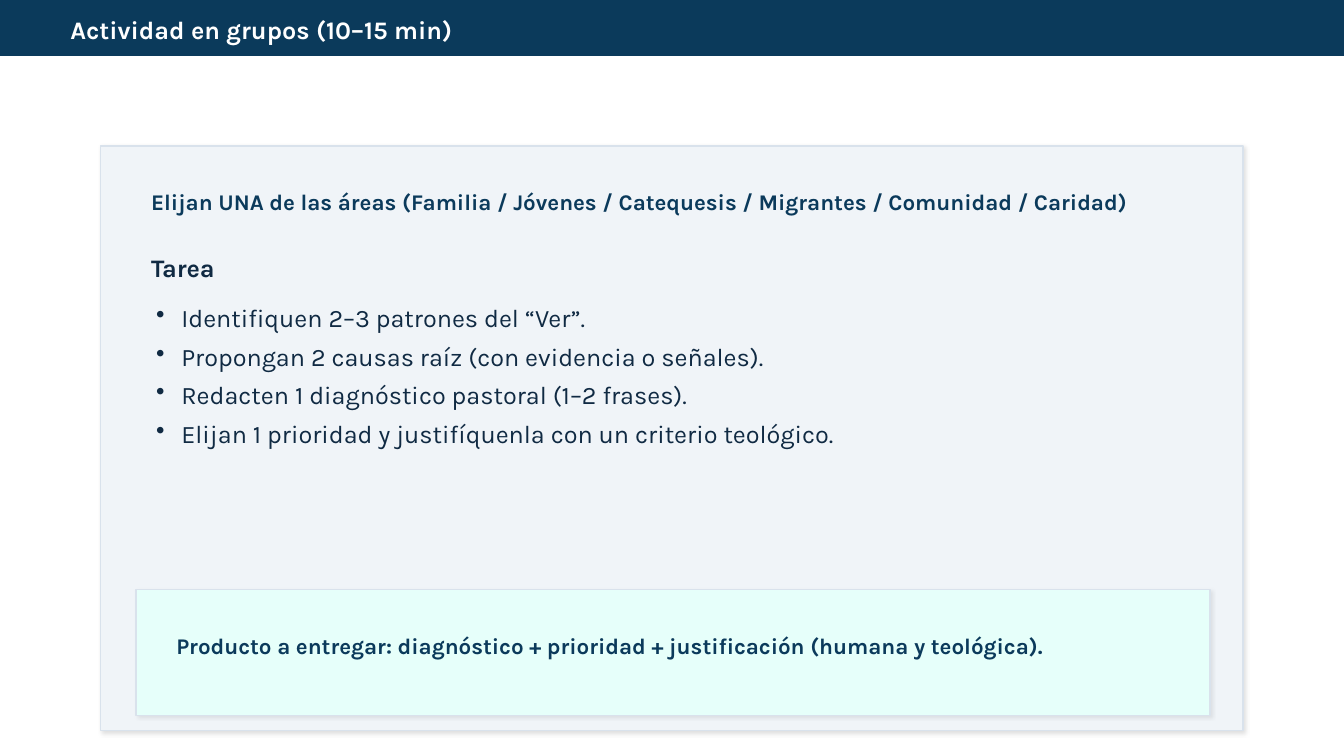
"""Builds the group activity slide with its task list and deliverable."""
from dataclasses import dataclass
from typing import Optional

from lxml.etree import SubElement
from pptx import Presentation
from pptx.dml.color import RGBColor
from pptx.enum.shapes import MSO_SHAPE
from pptx.enum.text import MSO_ANCHOR
from pptx.oxml.ns import qn
from pptx.slide import Slide
from pptx.util import Inches, Pt

COLORS = {
    "navy": "0B3A5B",
    "ink": "102A43",
    "white": "FFFFFF",
    "panel": "F0F4F8",
    "mint": "E6FFFA",
    "border": "D9E2EC",
    "shadow": "000000",
}
FONT = "Karla"


@dataclass(frozen=True)
class Shadow:
    opacity: int
    blur: float
    distance: float
    angle: int = 45


@dataclass(frozen=True)
class Panel:
    left: float
    top: float
    width: float
    height: float
    fill: str
    line: str
    shadow: Optional[Shadow] = None


@dataclass(frozen=True)
class Label:
    text: str
    left: float
    top: float
    width: float
    height: float
    size: int
    color: str


PANELS = [
    Panel(0, 0, 13.33, 0.55, "navy", "navy"),
    Panel(1, 1.45, 11.33, 5.8, "panel", "border", Shadow(12, 3, 1.5)),
    Panel(1.35, 5.85, 10.65, 1.25, "mint", "border", Shadow(8, 2.5, 1.2)),
]
LABELS = [
    Label("Actividad en grupos (10–15 min)", 0.6, 0.12, 12.2, 0.35, 18, "white"),
    Label("Elijan UNA de las áreas (Familia / Jóvenes / Catequesis / Migrantes / Comunidad / Caridad)",
          1.4, 1.75, 10.7, 0.5, 16, "navy"),
    Label("Tarea", 1.4, 2.45, 10.7, 0.4, 18, "ink"),
    Label("Producto a entregar: diagnóstico + prioridad + justificación (humana y teológica).",
          1.65, 6.15, 10.05, 0.5, 16, "navy"),
]
TASKS = [
    "Identifiquen 2–3 patrones del “Ver”.",
    "Propongan 2 causas raíz (con evidencia o señales).",
    "Redacten 1 diagnóstico pastoral (1–2 frases).",
    "Elijan 1 prioridad y justifíquenla con un criterio teológico.",
]


def color(name: str) -> RGBColor:
    return RGBColor.from_string(COLORS[name])


def add_panel(slide: Slide, panel: Panel) -> None:
    shape = slide.shapes.add_shape(
        MSO_SHAPE.RECTANGLE, Inches(panel.left), Inches(panel.top),
        Inches(panel.width), Inches(panel.height))
    shape.fill.solid()
    shape.fill.fore_color.rgb = color(panel.fill)
    shape.line.color.rgb = color(panel.line)
    shape.line.width = Pt(1)
    shape.shadow.inherit = False
    if panel.shadow:
        effects = shape._element.spPr.find(qn("a:effectLst"))
        outer = SubElement(effects, qn("a:outerShdw"), {
            "blurRad": str(Pt(panel.shadow.blur)),
            "dist": str(Pt(panel.shadow.distance)),
            "dir": str(panel.shadow.angle * 60000),
            "algn": "bl",
            "rotWithShape": "0",
        })
        tint = SubElement(outer, qn("a:srgbClr"), val=COLORS["shadow"])
        SubElement(tint, qn("a:alpha"), val=str(panel.shadow.opacity * 1000))


def add_text(slide: Slide, text: str, *, left: float, top: float, width: float,
             height: float, size: int, color_name: str, bold: bool = False,
             bulleted: bool = False, anchor: MSO_ANCHOR = MSO_ANCHOR.MIDDLE) -> None:
    shape = slide.shapes.add_textbox(
        Inches(left), Inches(top), Inches(width), Inches(height))
    frame = shape.text_frame
    frame.word_wrap = True
    frame.vertical_anchor = anchor
    frame.text = text
    for paragraph in frame.paragraphs:
        if bulleted:
            paragraph.space_after = Pt(6)
            properties = paragraph._p.get_or_add_pPr()
            properties.set("marL", str(Inches(0.25)))
            properties.set("indent", str(Inches(-0.25)))
            SubElement(properties, qn("a:buChar"), char="•")
        font = paragraph.runs[0].font
        font.name = FONT
        font.size = Pt(size)
        font.bold = bold
        font.color.rgb = color(color_name)


def main() -> None:
    presentation = Presentation()
    presentation.slide_width = Inches(13.33)
    presentation.slide_height = Inches(7.5)
    slide = presentation.slides.add_slide(presentation.slide_layouts[6])
    for panel in PANELS:
        add_panel(slide, panel)
    for label in LABELS:
        add_text(slide, label.text, left=label.left, top=label.top, width=label.width,
                 height=label.height, size=label.size, color_name=label.color, bold=True)
    add_text(slide, "\n".join(TASKS), left=1.45, top=2.95, width=10.8, height=2.6,
             size=18, color_name="ink", bulleted=True, anchor=MSO_ANCHOR.TOP)
    presentation.save("out.pptx")


if __name__ == "__main__":
    main()
